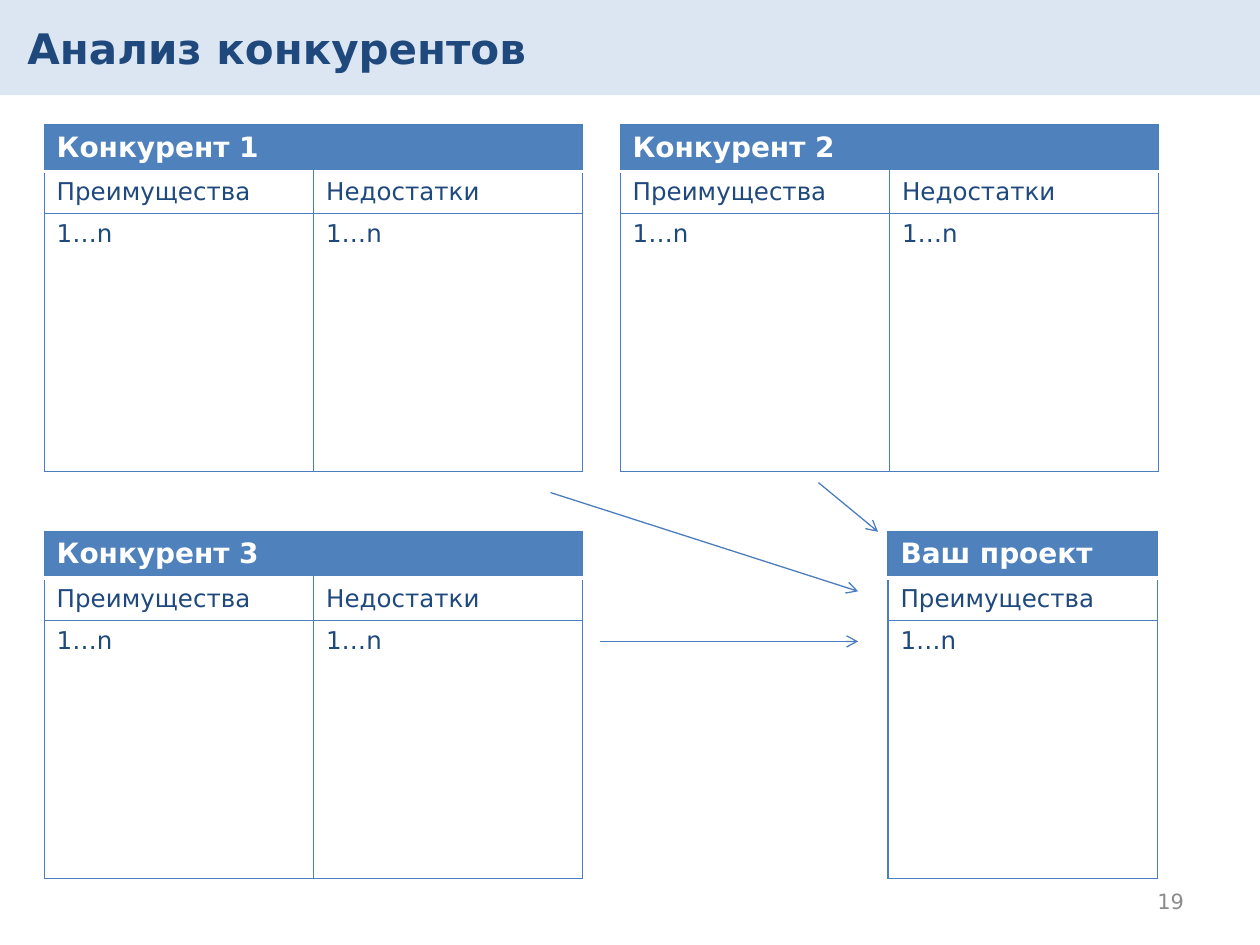
from dataclasses import dataclass

from pptx import Presentation
from pptx.dml.color import RGBColor
from pptx.enum.shapes import MSO_CONNECTOR, MSO_SHAPE
from pptx.enum.text import MSO_ANCHOR, PP_ALIGN
from pptx.oxml.ns import qn
from pptx.util import Cm, Pt
from lxml.etree import SubElement


@dataclass(frozen=True)
class Theme:
    font: str = "DejaVu Sans"
    navy: str = "1F497D"
    blue: str = "4F81BD"
    line: str = "4B7EBC"
    band: str = "DCE6F2"
    white: str = "FFFFFF"
    gray: str = "8C8C8C"
    title_size: int = 24
    header_size: int = 16
    body_size: int = 14
    number_size: int = 12
    line_width: float = 0.75
    header_line_width: float = 2


class SlideBuilder:
    def __init__(self, slide, theme):
        self.slide = slide
        self.theme = theme

    def set_text(self, text_frame, text, size, color, bold=False, align=PP_ALIGN.LEFT):
        text_frame.text = text
        paragraph = text_frame.paragraphs[0]
        paragraph.alignment = align
        font = paragraph.runs[0].font
        font.name = self.theme.font
        font.size = Pt(size)
        font.bold = bold
        font.color.rgb = RGBColor.from_string(color)

    def title_band(self, width, height):
        shape = self.slide.shapes.add_shape(MSO_SHAPE.RECTANGLE, 0, 0, width, height)
        shape.shadow.inherit = False
        shape.fill.solid()
        shape.fill.fore_color.rgb = RGBColor.from_string(self.theme.band)
        shape.line.fill.background()
        # Send the band behind the title
        self.slide.shapes.title._element.addprevious(shape._element)

    def title(self, text, left, top, width, height):
        title = self.slide.shapes.title
        title.left, title.top, title.width, title.height = left, top, width, height
        title.text_frame.vertical_anchor = MSO_ANCHOR.MIDDLE
        self.set_text(title.text_frame, text, self.theme.title_size, self.theme.navy, bold=True)

    def page_number(self, text, left, top, width, height):
        box = self.slide.shapes.add_textbox(left, top, width, height)
        box.text_frame.word_wrap = True
        box.text_frame.vertical_anchor = MSO_ANCHOR.MIDDLE
        self.set_text(box.text_frame, text, self.theme.number_size, self.theme.gray,
                      align=PP_ALIGN.RIGHT)

    def borders(self, cell, row):
        properties = cell._tc.get_or_add_tcPr()
        # A thick white rule separates the header from the row below it
        white_side = {0: "lnB", 1: "lnT"}.get(row)
        for side in ("lnL", "lnR", "lnT", "lnB"):
            color, width = self.theme.line, self.theme.line_width
            if side == white_side:
                color, width = self.theme.white, self.theme.header_line_width
            line = SubElement(properties, qn(f"a:{side}"), w=str(Pt(width)))
            fill = SubElement(line, qn("a:solidFill"))
            SubElement(fill, qn("a:srgbClr"), val=color)

    def comparison_table(self, heading, columns, left, top, column_width, row_heights):
        count = len(columns)
        frame = self.slide.shapes.add_table(
            len(row_heights), count, left, top, column_width * count, sum(row_heights))
        table = frame.table
        table.horz_banding = False
        for column in table.columns:
            column.width = column_width
        for row, height in zip(table.rows, row_heights):
            row.height = height

        rows = [[heading] + [""] * (count - 1), columns, ["1…n"] * count]
        for row_index, texts in enumerate(rows):
            is_header = row_index == 0
            for column_index, text in enumerate(texts):
                cell = table.cell(row_index, column_index)
                self.borders(cell, row_index)
                cell.fill.solid()
                cell.fill.fore_color.rgb = RGBColor.from_string(
                    self.theme.blue if is_header else self.theme.white)
                if text:
                    self.set_text(
                        cell.text_frame, text,
                        self.theme.header_size if is_header else self.theme.body_size,
                        self.theme.white if is_header else self.theme.navy,
                        bold=is_header)
        if count > 1:
            table.cell(0, 0).merge(table.cell(0, count - 1))

    def arrow(self, start, end):
        connector = self.slide.shapes.add_connector(MSO_CONNECTOR.STRAIGHT, *start, *end)
        connector.line.color.rgb = RGBColor.from_string(self.theme.line)
        connector.line.width = Pt(self.theme.line_width)
        properties = connector._element.spPr
        SubElement(properties.find(qn("a:ln")), qn("a:tailEnd"), type="arrow")
        SubElement(properties, qn("a:effectLst"))


def main():
    presentation = Presentation()
    presentation.slide_width = Cm(25.4)
    presentation.slide_height = Cm(19.05)
    slide = presentation.slides.add_slide(presentation.slide_layouts[5])
    builder = SlideBuilder(slide, Theme())

    # Title and page number
    builder.title_band(presentation.slide_width, Cm(1.92))
    builder.title("Анализ конкурентов", Cm(0.3), Cm(0.23), Cm(22.86), Cm(1.48))
    builder.page_number("19", Cm(18.2), Cm(17.66), Cm(5.92), Cm(1.01))

    # Competitor tables and the project table
    column_width = Cm(5.43)
    row_heights = [Cm(0.92), Cm(0.84), Cm(5.21)]
    left, right, project_left = Cm(0.89), Cm(12.5), Cm(17.9)
    upper, lower = Cm(2.52), Cm(10.72)
    both = ["Преимущества", "Недостатки"]
    for heading, columns, x, y in (
        ("Конкурент 1", both, left, upper),
        ("Конкурент 2", both, right, upper),
        ("Конкурент 3", both, left, lower),
        ("Ваш проект", both[:1], project_left, lower),
    ):
        builder.comparison_table(heading, columns, x, y, column_width, row_heights)

    # Arrows from the competitors to the project
    arrow_end = Cm(17.3)
    builder.arrow((Cm(11.1), Cm(9.93)), (arrow_end, Cm(11.92)))
    builder.arrow((Cm(12.1), Cm(12.93)), (arrow_end, Cm(12.93)))
    builder.arrow((Cm(16.5), Cm(9.73)), (Cm(17.7), lower))

    presentation.save("out.pptx")


if __name__ == "__main__":
    main()
